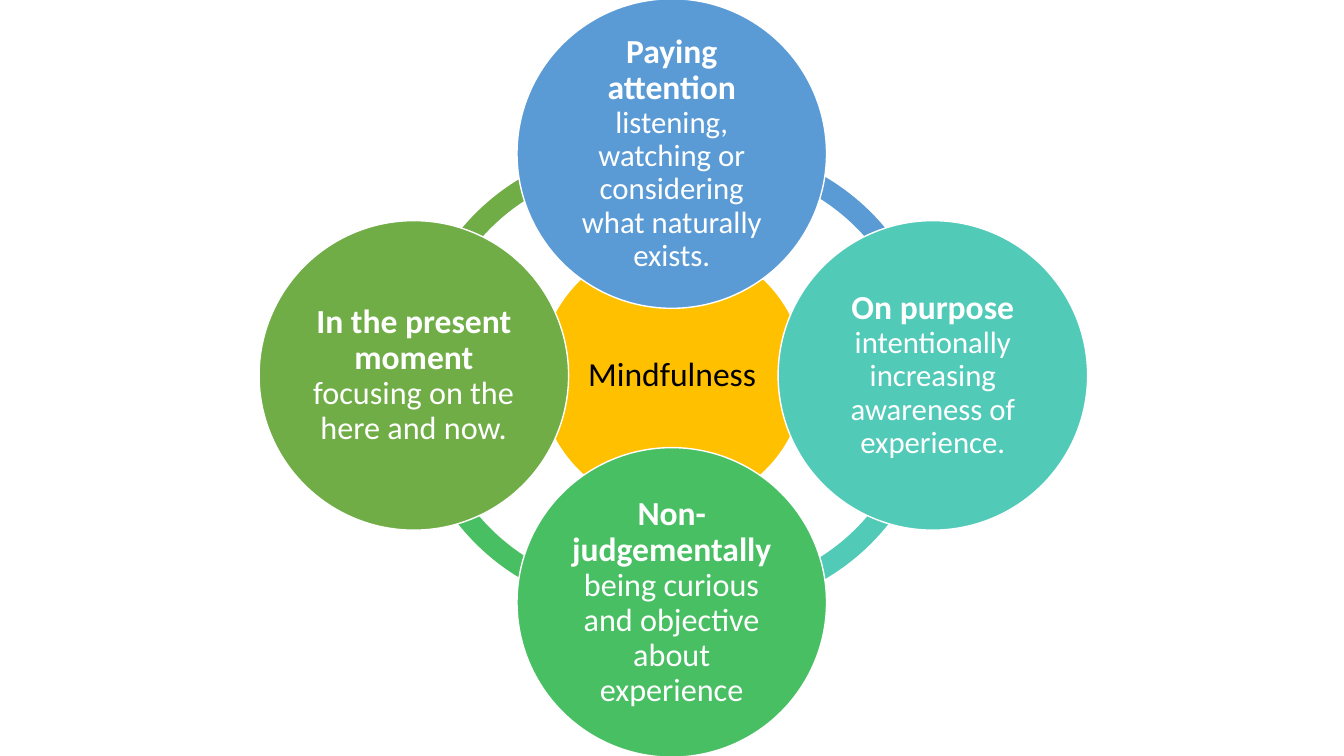
from dataclasses import dataclass

from pptx import Presentation
from pptx.dml.color import RGBColor
from pptx.enum.shapes import MSO_SHAPE
from pptx.enum.text import MSO_ANCHOR, PP_ALIGN
from pptx.util import Cm, Pt

CIRCLE = MSO_SHAPE.OVAL
ARC = MSO_SHAPE.BLOCK_ARC
MIDDLE = MSO_ANCHOR.MIDDLE
CENTER = PP_ALIGN.CENTER

COLORS = {
    "white": "FFFFFF",
    "black": "000000",
    "gold": "FFC000",
    "blue": "5B9BD5",
    "teal": "52CAB8",
    "green": "49BF64",
    "olive": "70AD47",
}
FONT = "Calibri"
TITLE_SIZE = 24
HUB_DIAMETER = 6.71
PETAL_DIAMETER = 7.8
ARC_DIAMETER = 11.58
ARC_THICKNESS = 0.046
ADJUSTMENT_PER_DEGREE = 0.6
INSET = Cm(0.08)
FRAME_FORMAT = {
    "word_wrap": True,
    "vertical_anchor": MIDDLE,
    "margin_left": INSET,
    "margin_right": INSET,
    "margin_top": INSET,
    "margin_bottom": INSET,
}
PARAGRAPH_FORMAT = {"alignment": CENTER, "line_spacing": 0.9}


@dataclass(frozen=True)
class Phrase:
    text: str
    size: int
    bold: bool = False


@dataclass(frozen=True)
class Link:
    center: tuple[float, float]
    start: float
    end: float


@dataclass(frozen=True)
class Petal:
    title: str
    detail: str
    detail_size: int
    color: str
    center: tuple[float, float]
    link: Link


PETALS = [
    Petal("Paying attention ", "listening, watching or considering what naturally exists.",
          22, "blue", (16.93, 3.87), Link((17.86, 9.45), 260.69, 0.12)),
    Petal("On purpose ", "intentionally increasing awareness of experience.",
          22, "teal", (23.51, 9.46), Link((17.86, 9.6), 358.61, 99.33)),
    Petal("Non-judgementally ", "being curious and objective about experience",
          23, "green", (16.93, 15.18), Link((16.08, 9.6), 81.37, 181.28)),
    Petal("In the present moment ", "focusing on the here and now.",
          23, "olive", (10.43, 9.46), Link((16.08, 9.47), 179.99, 278.61)),
]


def rgb(color: str) -> RGBColor:
    return RGBColor.from_string(COLORS[color])


def apply_format(target, values: dict) -> None:
    for attribute, value in values.items():
        setattr(target, attribute, value)


def add_round(shapes, kind, center: tuple[float, float], diameter: float, color: str):
    x, y = center
    figure = shapes.add_shape(kind, Cm(x - diameter / 2), Cm(y - diameter / 2),
                              Cm(diameter), Cm(diameter))
    figure.shadow.inherit = False
    figure.fill.solid()
    figure.fill.fore_color.rgb = rgb(color)
    return figure


def add_link(shapes, link: Link, color: str) -> None:
    arc = add_round(shapes, ARC, link.center, ARC_DIAMETER, color)
    arc.line.fill.background()
    arc.adjustments[0] = link.start * ADJUSTMENT_PER_DEGREE
    arc.adjustments[1] = link.end * ADJUSTMENT_PER_DEGREE
    arc.adjustments[2] = ARC_THICKNESS


def add_circle(shapes, center: tuple[float, float], diameter: float, color: str,
               text_color: str, phrases: list[Phrase]) -> None:
    circle = add_round(shapes, CIRCLE, center, diameter, color)
    circle.line.color.rgb = rgb("white")
    circle.line.width = Pt(1)
    apply_format(circle.text_frame, FRAME_FORMAT)
    paragraph = circle.text_frame.paragraphs[0]
    apply_format(paragraph, PARAGRAPH_FORMAT)
    for phrase in phrases:
        run = paragraph.add_run()
        run.text = phrase.text
        apply_format(run.font, {"name": FONT, "size": Pt(phrase.size), "bold": phrase.bold})
        run.font.color.rgb = rgb(text_color)


def main() -> None:
    presentation = Presentation()
    presentation.slide_width = Cm(33.87)
    presentation.slide_height = Cm(19.05)
    shapes = presentation.slides.add_slide(presentation.slide_layouts[6]).shapes

    for petal in reversed(PETALS):
        add_link(shapes, petal.link, petal.color)
    add_circle(shapes, (16.94, 9.47), HUB_DIAMETER, "gold", "black",
               [Phrase("Mindfulness", TITLE_SIZE)])
    for petal in PETALS:
        add_circle(shapes, petal.center, PETAL_DIAMETER, petal.color, "white",
                   [Phrase(petal.title, TITLE_SIZE, True),
                    Phrase(petal.detail, petal.detail_size)])

    presentation.save("out.pptx")


if __name__ == "__main__":
    main()
